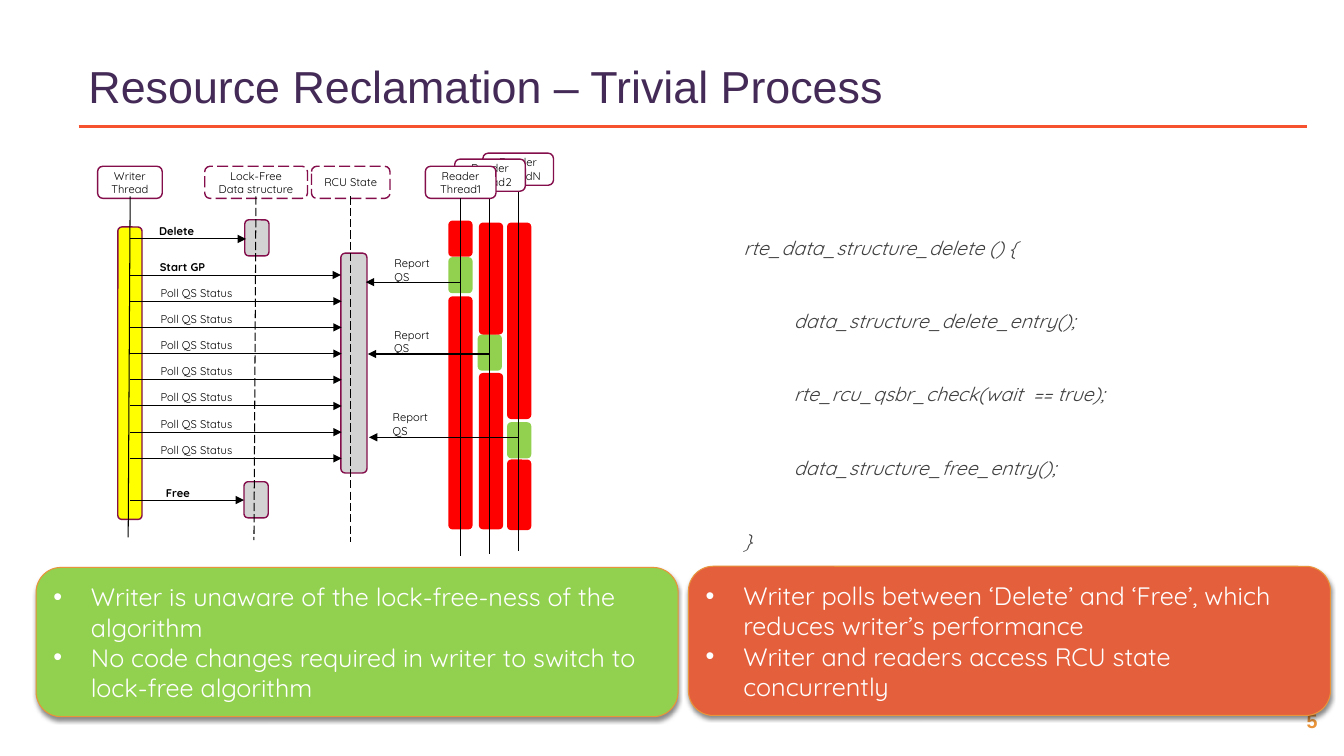
import pptx
import pptx.util
import pptx.dml.color
import pptx.enum.dml
import pptx.enum.shapes
import pptx.enum.text
import pptx.oxml
import pptx.oxml.ns
from lxml import etree

Cm, Pt = pptx.util.Cm, pptx.util.Pt
RGB = pptx.dml.color.RGBColor.from_string
ALIGN = pptx.enum.text.PP_ALIGN
ANCHOR = pptx.enum.text.MSO_ANCHOR
SHAPE = pptx.enum.shapes.MSO_SHAPE
DASH = pptx.enum.dml.MSO_LINE.LONG_DASH
qn = pptx.oxml.ns.qn

COLORS = {
    "purple": "442A56", "plum": "840D4B", "rule": "F65230", "amber": "E9943A",
    "black": "000000", "white": "FFFFFF", "code": "404040", "grey": "D3D3D3",
    "yellow": "FFFF00", "red": "FF0000", "green": "92D050", "orange": "E45F3C",
}
SHADOW = (
    f'<a:effectLst {pptx.oxml.ns.nsdecls("a")}>'
    '<a:outerShdw blurRad="38100" dist="25400" dir="5400000" rotWithShape="0">'
    '<a:srgbClr val="000000"><a:alpha val="45000"/></a:srgbClr>'
    "</a:outerShdw></a:effectLst>"
)

deck = pptx.Presentation()
deck.slide_width, deck.slide_height = Cm(33.87), Cm(19.05)
page = deck.slides.add_slide(deck.slide_layouts[6])


def add_box(left, top, width, height, *lines, preset=SHAPE.ROUNDED_RECTANGLE,
            fill=None, line=None, weight=1, dash=None, size=8, font="Quicksand",
            color="black", bold=False, italic=False, align=ALIGN.LEFT,
            anchor=ANCHOR.MIDDLE, bullet=False):
    """Add a shape, or a text box when preset is None, with one paragraph per line."""
    place = Cm(left), Cm(top), Cm(width), Cm(height)
    if preset is None:
        box = page.shapes.add_textbox(*place)
    else:
        box = page.shapes.add_shape(preset, *place)
        box.shadow.inherit = False
        if fill:
            box.fill.solid()
            box.fill.fore_color.rgb = RGB(COLORS[fill])
        else:
            box.fill.background()
        if line:
            box.line.color.rgb = RGB(COLORS[line])
            box.line.width = Pt(weight)
            if dash:
                box.line.dash_style = dash
        else:
            box.line.fill.background()
    frame = box.text_frame
    frame.word_wrap = True
    frame.vertical_anchor = anchor
    for index, text in enumerate(lines):
        para = frame.paragraphs[0] if index == 0 else frame.add_paragraph()
        para.alignment = align
        if bullet:
            properties = para._p.get_or_add_pPr()
            properties.set("marL", str(Cm(0.95)))
            properties.set("indent", str(-Cm(0.95)))
            etree.SubElement(properties, qn("a:buFont")).set("typeface", "Arial")
            etree.SubElement(properties, qn("a:buChar")).set("char", "•")
        span = para.add_run()
        span.text = text
        span.font.size, span.font.name = Pt(size), font
        span.font.bold, span.font.italic = bold, italic
        span.font.color.rgb = RGB(COLORS[color])
    return box


def add_line(x1, y1, x2, y2, color="black", weight=0.75, dash=None, arrow=False):
    line = page.shapes.add_connector(
        pptx.enum.shapes.MSO_CONNECTOR.STRAIGHT, Cm(x1), Cm(y1), Cm(x2), Cm(y2))
    line.line.color.rgb = RGB(COLORS[color])
    line.line.width = Pt(weight)
    if dash:
        line.line.dash_style = dash
    if arrow:
        etree.SubElement(line.line._get_or_add_ln(), qn("a:tailEnd")).set("type", "triangle")
    etree.SubElement(line._element.spPr, qn("a:effectLst"))


# Page number, title and rule
add_box(32.28, 17.75, 1.57, 0.86, "5", preset=None, size=14, font="Arial",
        color="amber", bold=True, align=ALIGN.CENTER, anchor=ANCHOR.TOP)
add_line(1.98, 3.18, 32.94, 3.18, color="rule", weight=2.25)
add_box(1.98, 1.17, 21.95, 1.96, "Resource Reclamation – Trivial Process",
        preset=None, size=32, font="Arial", color="purple")

# Pseudocode
code = add_box(
    18.49, 5.31, 11.35, 6.71,
    "rte_data_structure_delete () {",
    "data_structure_delete_entry();",
    "rte_rcu_qsbr_check(wait  == true);",
    "data_structure_free_entry();",
    "}",
    preset=None, size=24, color="code", italic=True, anchor=ANCHOR.TOP)
for index, para in enumerate(code.text_frame.paragraphs):
    para.line_spacing = 1.4
    para.space_before = Pt(6 if index else 0)
    para.space_after = Pt(6)
    if 0 < index < 4:
        para._p.get_or_add_pPr().set("marL", str(Cm(1.27)))
    para.runs[0]._r.get_or_add_rPr().set("baseline", "30000")

# Activity bars of the writer, data structure and RCU state
for left, top, width, height, fill in [
    (6.15, 12.14, 0.61, 0.91, "grey"),
    (8.59, 6.38, 0.66, 5.54, "grey"),
    (6.17, 5.54, 0.61, 0.91, "grey"),
    (2.97, 5.72, 0.61, 7.37, "yellow"),
]:
    add_box(left, top, width, height, fill=fill, line="plum")

# Lifelines
for name, left, width, top_x, bottom_x, bottom, dash in [
    ("Writer Thread", 2.46, 1.63, 3.28, 3.23, 13.54, None),
    ("Lock-Free Data structure", 5.16, 2.59, 6.45, 6.40, 13.61, DASH),
    ("RCU State", 7.85, 1.98, 8.84, 8.84, 13.67, DASH),
]:
    add_box(left, 4.19, width, 0.81, name, line="plum", dash=dash, align=ALIGN.CENTER)
    add_line(top_x, 4.95, bottom_x, bottom, dash=dash)

# Readers, back to front: busy (red) around one quiescent state (green)
for name, left, top, axis, bottom, bars in [
    ("Reader ThreadN", 12.17, 3.86, 13.06, 13.89,
     [(12.78, 11.58, 1.78, "red"), (12.78, 10.64, 0.91, "green"), (12.78, 5.61, 4.95, "red")]),
    ("Reader Thread2", 11.46, 4.01, 12.34, 13.97,
     [(12.07, 9.40, 3.94, "red"), (12.04, 8.43, 0.91, "green"), (12.07, 5.61, 2.82, "red")]),
    ("Reader Thread1", 10.72, 4.19, 11.61, 14.02,
     [(11.30, 7.47, 5.87, "red"), (11.30, 6.48, 0.91, "green"), (11.30, 5.56, 0.91, "red")]),
]:
    add_box(left, top, 1.78, 0.81, name, fill="white", line="plum", align=ALIGN.CENTER)
    for bar_left, bar_top, height, fill in bars:
        add_box(bar_left, bar_top, 0.61, height, fill=fill)
    add_line(axis, top + 0.81, axis, bottom)

# Writer messages
for text, y, end, left, top in [
    ("Delete", 6.02, 6.20, 3.68, 5.69),
    ("Free", 12.60, 6.15, 3.71, 12.29),
]:
    add_line(3.27, y, end, y, arrow=True)
    add_box(left, top, 1.55, 0.25, text, bold=True, align=ALIGN.CENTER)
add_line(3.27, 6.93, 8.59, 6.93, arrow=True)
add_box(3.76, 6.55, 1.88, 0.38, "Start GP", bold=True)
for step in range(7):
    y = 7.59 + 0.66 * step
    add_line(3.27, y, 8.61, y, arrow=True)
    add_box(3.78, y - 0.38, 2.57, 0.33, "Poll QS Status")

# Reader reports
for start, end, y, left, top, height in [
    (11.61, 9.22, 7.11, 9.65, 6.38, 0.84),
    (12.34, 9.27, 8.92, 9.65, 8.23, 0.74),
    (13.06, 9.30, 11.02, 9.60, 10.19, 0.99),
]:
    add_line(start, y, end, y, arrow=True)
    add_box(left, top, 1.54, height, "Report QS")

# Callouts
for left, top, fill, points in [
    (0.91, 14.30, "green",
     ["Writer is unaware of the lock-free-ness of the algorithm",
      "No code changes required in writer to switch to lock-free algorithm"]),
    (17.35, 14.27, "orange",
     ["Writer polls between ‘Delete’ and ‘Free’, which reduces writer’s performance",
      "Writer and readers access RCU state concurrently"]),
]:
    callout = add_box(left, top, 16.18, 3.76, *points,
                      preset=SHAPE.FLOWCHART_ALTERNATE_PROCESS, fill=fill,
                      line="amber", weight=0.75, size=18, color="white", bullet=True)
    properties = callout._element.spPr
    properties.replace(properties.find(qn("a:effectLst")), pptx.oxml.parse_xml(SHADOW))

deck.save("out.pptx")
